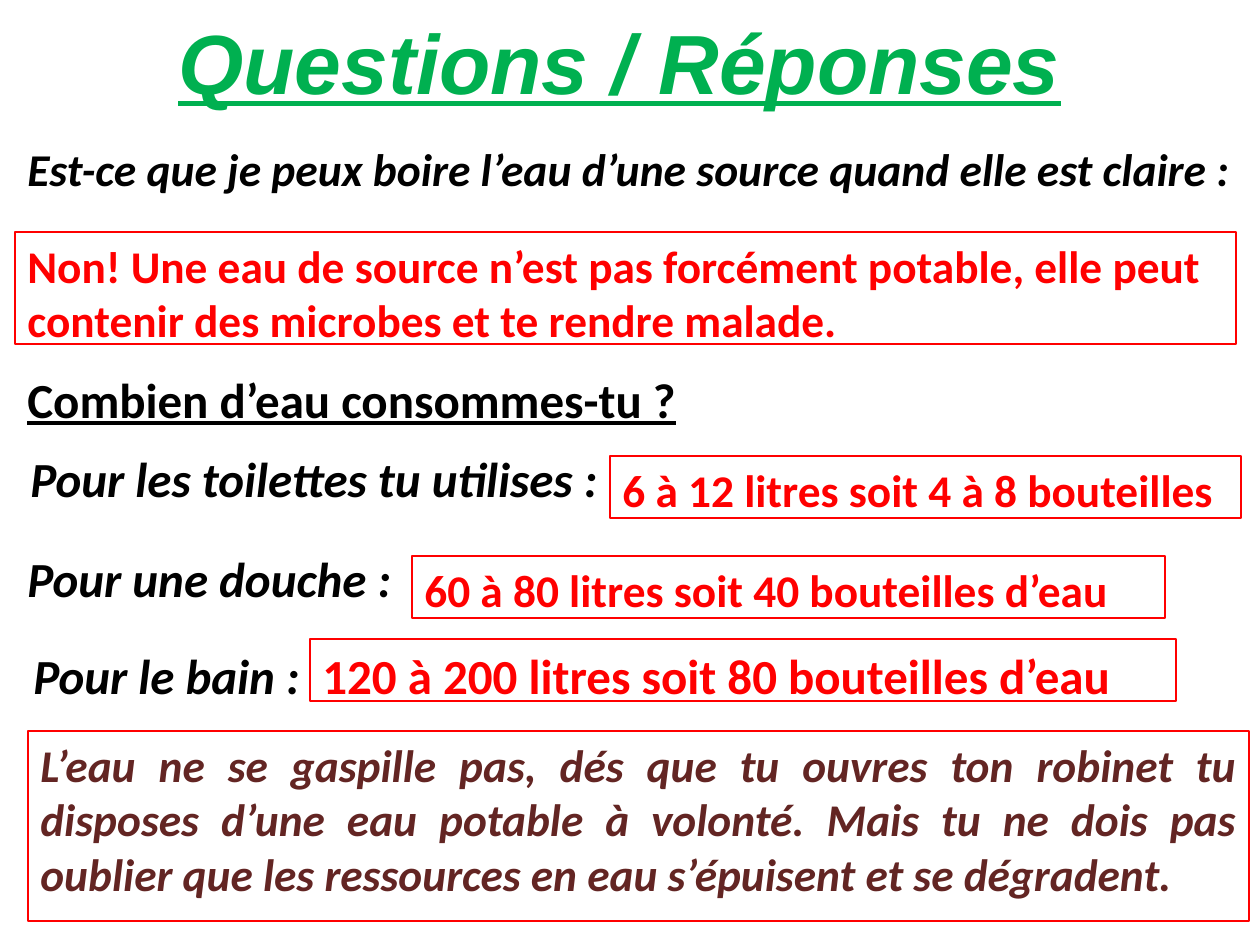
from pptx import Presentation
from pptx.dml.color import RGBColor
from pptx.enum.shapes import MSO_SHAPE
from pptx.enum.text import MSO_ANCHOR, MSO_AUTO_SIZE, PP_ALIGN
from pptx.util import Emu, Pt

LEFT, CENTER, JUSTIFY = PP_ALIGN.LEFT, PP_ALIGN.CENTER, PP_ALIGN.JUSTIFY
TOP, MIDDLE = MSO_ANCHOR.TOP, MSO_ANCHOR.MIDDLE
RECTANGLE = MSO_SHAPE.RECTANGLE
NO_AUTOFIT = MSO_AUTO_SIZE.NONE
PX_PER_INCH = 126
COLORS = {"title": "00B050", "question": "000000", "answer": "FF0000", "advice": "632523"}


def px(length):
    return Emu(round(length * 914400 / PX_PER_INCH))


def color(name):
    return RGBColor.from_string(COLORS[name])


def write(shape, text, size, ink, face="Calibri", align=LEFT, anchor=TOP,
          italic=False, underline=False):
    frame = shape.text_frame
    frame.word_wrap = True
    frame.auto_size = NO_AUTOFIT
    frame.vertical_anchor = anchor
    frame.text = text
    para = frame.paragraphs[0]
    para.alignment = align
    font = para.font
    font.name, font.size, font.bold = face, Pt(size), True
    font.italic, font.underline = italic, underline
    font.color.rgb = color(ink)


def add_title(page, text):
    title = page.shapes.title
    title.left, title.top, title.width, title.height = map(px, (84, 16, 1071, 90))
    write(title, text, 48, "title", face="Arial", align=CENTER, anchor=MIDDLE,
          italic=True, underline=True)


def add_question(page, bounds, text, size=28, **style):
    box = page.shapes.add_textbox(*map(px, bounds))
    write(box, text, size, "question", **style)


def add_framed(page, bounds, text, size=25.9, ink="answer", **style):
    box = page.shapes.add_shape(RECTANGLE, *map(px, bounds))
    box.shadow.inherit = False
    box.fill.background()
    box.line.color.rgb = color("answer")
    box.line.width = Pt(0.75)
    write(box, text, size, ink, **style)


def main():
    deck = Presentation()
    deck.slide_width, deck.slide_height = px(1260), px(945)
    page = deck.slides.add_slide(deck.slide_layouts[5])
    add_title(page, "Questions / Réponses")

    # Drinking from a spring
    add_question(page, (15, 135, 1245, 79),
                 "Est-ce que je peux boire l’eau d’une source quand elle est claire :",
                 size=26, italic=True)
    add_framed(page, (15, 232, 1221, 112),
               "Non! Une eau de source n’est pas forcément potable, "
               "elle peut contenir des microbes et te rendre malade.")

    # Water used at home: each question with its answer beside it
    add_question(page, (15, 363, 1221, 79), "Combien d’eau consommes-tu ?", underline=True)
    uses = [
        ((18, 442, 607, 79), "Pour les toilettes tu utilises :",
         (610, 456, 631, 62), "6 à 12 litres soit 4 à 8 bouteilles", 25.9),
        ((15, 542, 397, 79), "Pour une douche :",
         (412, 556, 753, 62), "60 à 80 litres soit 40 bouteilles d’eau", 25.9),
        ((21, 639, 330, 79), "Pour le bain :",
         (310, 639, 866, 62), "120 à 200 litres soit 80 bouteilles d’eau", 28),
    ]
    for question_bounds, question, answer_bounds, answer, size in uses:
        add_question(page, question_bounds, question, italic=True)
        add_framed(page, answer_bounds, answer, size)

    # Closing advice
    add_framed(page, (28, 731, 1221, 190),
               "L’eau ne se gaspille pas, dés que tu ouvres ton robinet tu disposes "
               "d’une eau potable à volonté. Mais tu ne dois pas oublier que les "
               "ressources en eau s’épuisent et se dégradent.",
               ink="advice", align=JUSTIFY, italic=True)
    deck.save("out.pptx")


if __name__ == "__main__":
    main()
